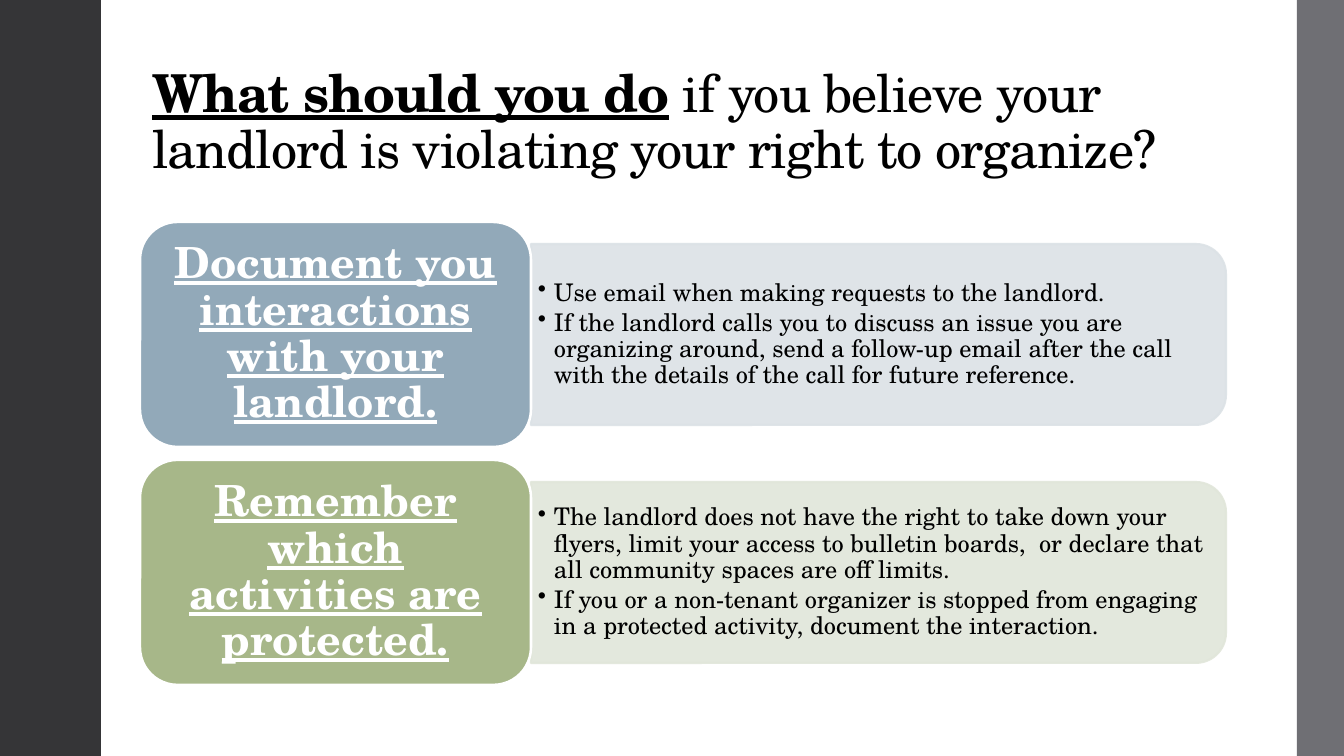
from lxml.etree import SubElement
from pptx import Presentation
from pptx.dml.color import RGBColor
from pptx.enum.shapes import MSO_SHAPE
from pptx.enum.text import MSO_ANCHOR, MSO_AUTO_SIZE, PP_ALIGN
from pptx.oxml.ns import qn
from pptx.util import Emu, Pt

SCALE = 914400 / 134.4
WIDE, HIGH = 1344, 756
STEP = 238
ROWS = [
    ("92A9B9", "DCE2E6", "Document you interactions with your landlord.", [
        "Use email when making requests to the landlord.",
        "If the landlord calls you to discuss an issue you are organizing around, "
        "send a follow-up email after the call with the details of the call for "
        "future reference."]),
    ("A7B789", "E1E6DA", "Remember which activities are protected.", [
        "The landlord does not have the right to take down your flyers, limit your "
        "access to bulletin boards,  or declare that all community spaces are "
        "off limits.",
        "If you or a non-tenant organizer is stopped from engaging in a protected "
        "activity, document the interaction."]),
]


def px(count):
    return Emu(round(count * SCALE))


def tint(code):
    return RGBColor.from_string(code)


def write(para, text, size=13, color="000000", bold=False, under=False,
          font="TeX Gyre Schola", align=PP_ALIGN.LEFT, track=None):
    para.alignment = align
    para.line_spacing = 0.9
    run = para.add_run()
    run.text = text
    run.font.name = font
    run.font.size = Pt(size)
    run.font.bold = bold
    run.font.underline = under
    run.font.color.rgb = tint(color)
    if track is not None:
        run.font._element.set("spc", str(track))


class Deck:
    """Hold the style and the current slide."""

    def __init__(self):
        self.show = Presentation()
        self.show.slide_width, self.show.slide_height = px(WIDE), px(HIGH)
        self.slide = self.show.slides.add_slide(self.show.slide_layouts[5])

    def frame(self, shape, side, edge, anchor=MSO_ANCHOR.MIDDLE):
        frame = shape.text_frame
        frame.word_wrap = True
        frame.auto_size = MSO_AUTO_SIZE.NONE
        frame.vertical_anchor = anchor
        frame.margin_left = frame.margin_right = px(side)
        frame.margin_top = frame.margin_bottom = px(edge)
        return frame

    def title(self, strong, rest, x, y, w, h):
        shape = self.slide.shapes.title
        shape.left, shape.top, shape.width, shape.height = map(px, (x, y, w, h))
        para = self.frame(shape, 13, 7, MSO_ANCHOR.BOTTOM).paragraphs[0]
        write(para, strong, size=28, bold=True, under=True, track=-50)
        write(para, rest, size=28, track=-50)

    def block(self, kind, x, y, w, h, fill, line=None, weight=1):
        shape = self.slide.shapes.add_shape(kind, *map(px, (x, y, w, h)))
        shape.shadow.inherit = False
        shape.fill.solid()
        shape.fill.fore_color.rgb = tint(fill)
        if line:
            shape.line.color.rgb = tint(line)
            shape.line.width = Pt(weight)
        else:
            shape.line.fill.background()
        return shape

    def band(self, x, y, w, h, fill):
        shape = self.block(MSO_SHAPE.ROUND_2_SAME_RECTANGLE, x + (w - h) / 2,
                           y + (h - w) / 2, h, w, fill, fill, 1.1)
        shape.rotation = 90
        for color in shape._element.spPr.iter(qn("a:srgbClr")):
            SubElement(color, qn("a:alpha"), val="90000")

    def card(self, text, x, y, w, h, fill):
        shape = self.block(MSO_SHAPE.ROUNDED_RECTANGLE, x, y, w, h, fill,
                           "FFFFFF", 1.35)
        para = self.frame(shape, 13, 7).paragraphs[0]
        write(para, text, size=23, color="FFFFFF", bold=True, under=True,
              align=PP_ALIGN.CENTER)

    def list(self, items, x, y, w, h):
        box = self.slide.shapes.add_textbox(*map(px, (x, y, w, h)))
        frame = self.frame(box, 7, 4)
        for spot, item in enumerate(items):
            para = frame.add_paragraph() if spot else frame.paragraphs[0]
            props = para._p.get_or_add_pPr()
            props.set("marL", str(px(16)))
            props.set("indent", str(px(-16)))
            shade = SubElement(props, qn("a:buClr"))
            SubElement(shade, qn("a:srgbClr"), val="000000")
            SubElement(props, qn("a:buChar"), char="•")
            para.space_after = Pt(2)
            write(para, item)


def main():
    deck = Deck()
    deck.title("What should you do",
               " if you believe your landlord is violating your right to organize?",
               139, 40, 1087, 147)
    deck.block(MSO_SHAPE.RECTANGLE, 0, 0, 101, HIGH, "353537")
    deck.block(MSO_SHAPE.RECTANGLE, 1297, 0, WIDE - 1297, HIGH, "6F6F74")
    for row, (dark, pale, head, items) in enumerate(ROWS):
        top = 222 + row * STEP
        deck.band(531, top + 22, 695, 181, pale)
        deck.list(items, 531, top + 31, 687, 163)
        deck.card(head, 140, top, 391, 225, dark)
    deck.show.save("out.pptx")


if __name__ == "__main__":
    main()
